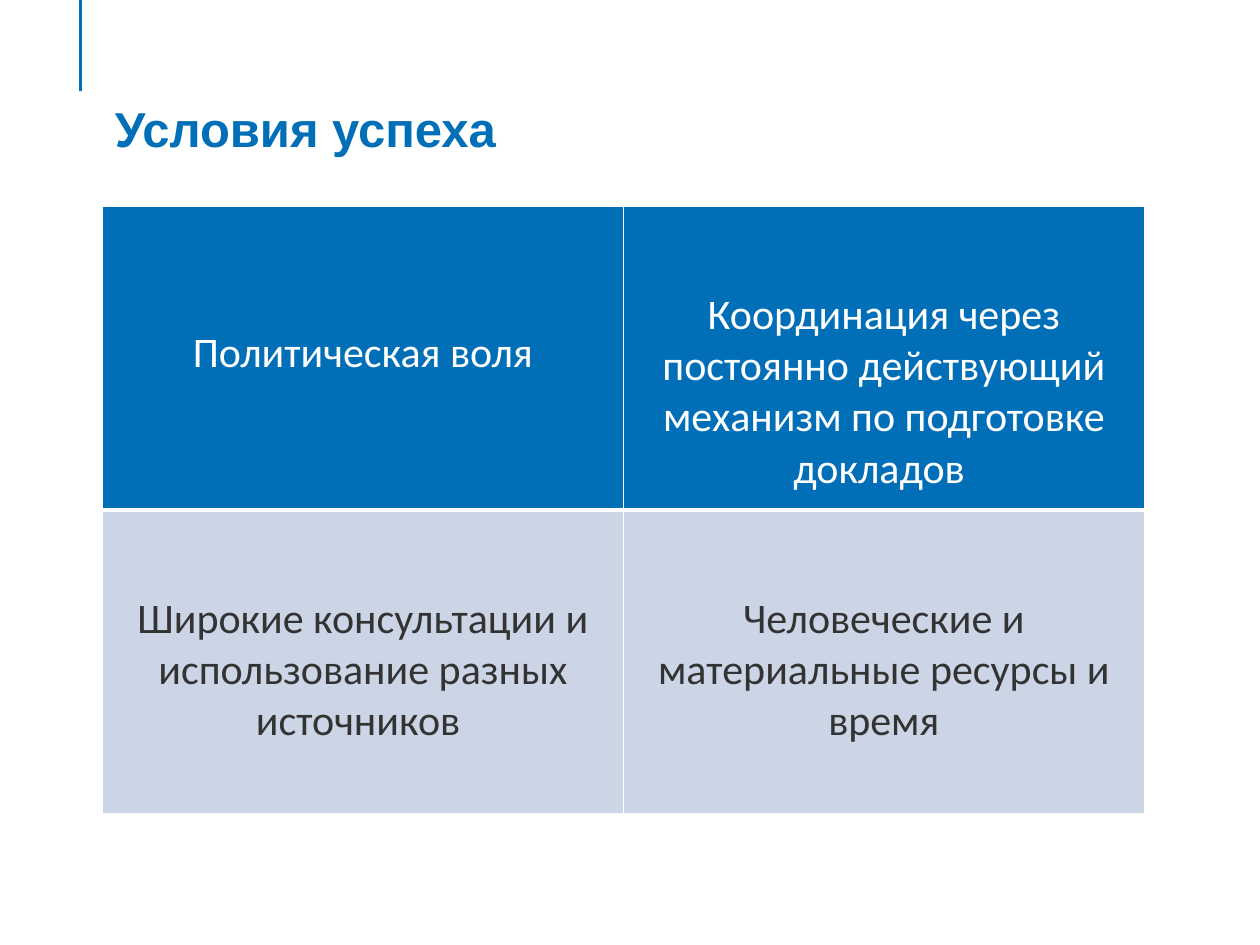
from lxml import etree
from pptx import Presentation
from pptx.dml.color import RGBColor
from pptx.enum import shapes, text
from pptx.oxml.ns import qn
from pptx.util import Pt

BLUE = RGBColor(0x00, 0x6F, 0xB7)
PALE = RGBColor(0xCC, 0xD5, 0xE6)
DARK = RGBColor(0x33, 0x33, 0x33)
WHITE = RGBColor(0xFF, 0xFF, 0xFF)

LEFT, WIDTH = 58.5, 595.5
ROW_HEIGHT = 173.5

# Each row: fill, text colour, bottom border width, (wording, top margin) per cell
ROWS = [
    (BLUE, WHITE, 3, [
        ("Политическая воля", 69.5),
        ("Координация через постоянно действующий механизм по подготовке докладов ", 47.5),
    ]),
    (PALE, DARK, 1, [
        ("Широкие консультации и использование разных источников ", 47.5),
        ("Человеческие и материальные ресурсы и время", 47.5),
    ]),
]


def set_borders(cell, widths):
    """Draw white borders; widths maps L, R, T, B to points."""
    properties = cell._tc.get_or_add_tcPr()
    for position, (side, width) in enumerate(widths.items()):
        line = etree.Element(qn(f"a:ln{side}"), w=str(Pt(width)))
        fill = etree.SubElement(line, qn("a:solidFill"))
        etree.SubElement(fill, qn("a:srgbClr"), val=str(WHITE))
        properties.insert(position, line)


def add_run(paragraph, wording, font_name, size, color, bold):
    run = paragraph.add_run()
    run.text = wording
    run.font.name = font_name
    run.font.size = Pt(size)
    run.font.color.rgb = color
    run.font.bold = bold


presentation = Presentation()
presentation.slide_width = Pt(720)
presentation.slide_height = Pt(540)
slide = presentation.slides.add_slide(presentation.slide_layouts[5])

# Accent line above the title
accent = slide.shapes.add_connector(
    shapes.MSO_CONNECTOR.STRAIGHT, Pt(46), Pt(0), Pt(46), Pt(52))
accent.line.color.rgb = BLUE
accent.line.width = Pt(2)
etree.SubElement(accent._element.spPr, qn("a:effectLst"))

# Title
title = slide.shapes.title
title.left, title.top, title.width, title.height = Pt(LEFT), Pt(49), Pt(WIDTH), Pt(58)
frame = title.text_frame
frame.auto_size = text.MSO_AUTO_SIZE.NONE
frame.vertical_anchor = text.MSO_ANCHOR.TOP
frame.margin_top = Pt(7.5)
paragraph = frame.paragraphs[0]
paragraph.alignment = text.PP_ALIGN.LEFT
add_run(paragraph, "Условия успеха", "Arial", 28, BLUE, True)

# Table of conditions
table = slide.shapes.add_table(
    2, 2, Pt(LEFT), Pt(118), Pt(WIDTH), Pt(2 * ROW_HEIGHT)).table
for column in table.columns:
    column.width = Pt(WIDTH / 2)

for row_index, (fill, color, bottom, conditions) in enumerate(ROWS):
    table.rows[row_index].height = Pt(ROW_HEIGHT)
    top = ROWS[row_index - 1][2] if row_index else 1
    for column_index, (wording, top_margin) in enumerate(conditions):
        cell = table.cell(row_index, column_index)
        cell.fill.solid()
        cell.fill.fore_color.rgb = fill
        cell.margin_top = Pt(top_margin)
        cell.vertical_anchor = text.MSO_ANCHOR.TOP
        set_borders(cell, {"L": 1, "R": 1, "T": top, "B": bottom})
        paragraph = cell.text_frame.paragraphs[0]
        paragraph.alignment = text.PP_ALIGN.CENTER
        add_run(paragraph, wording, "Calibri", 24, color, False)

presentation.save("out.pptx")
